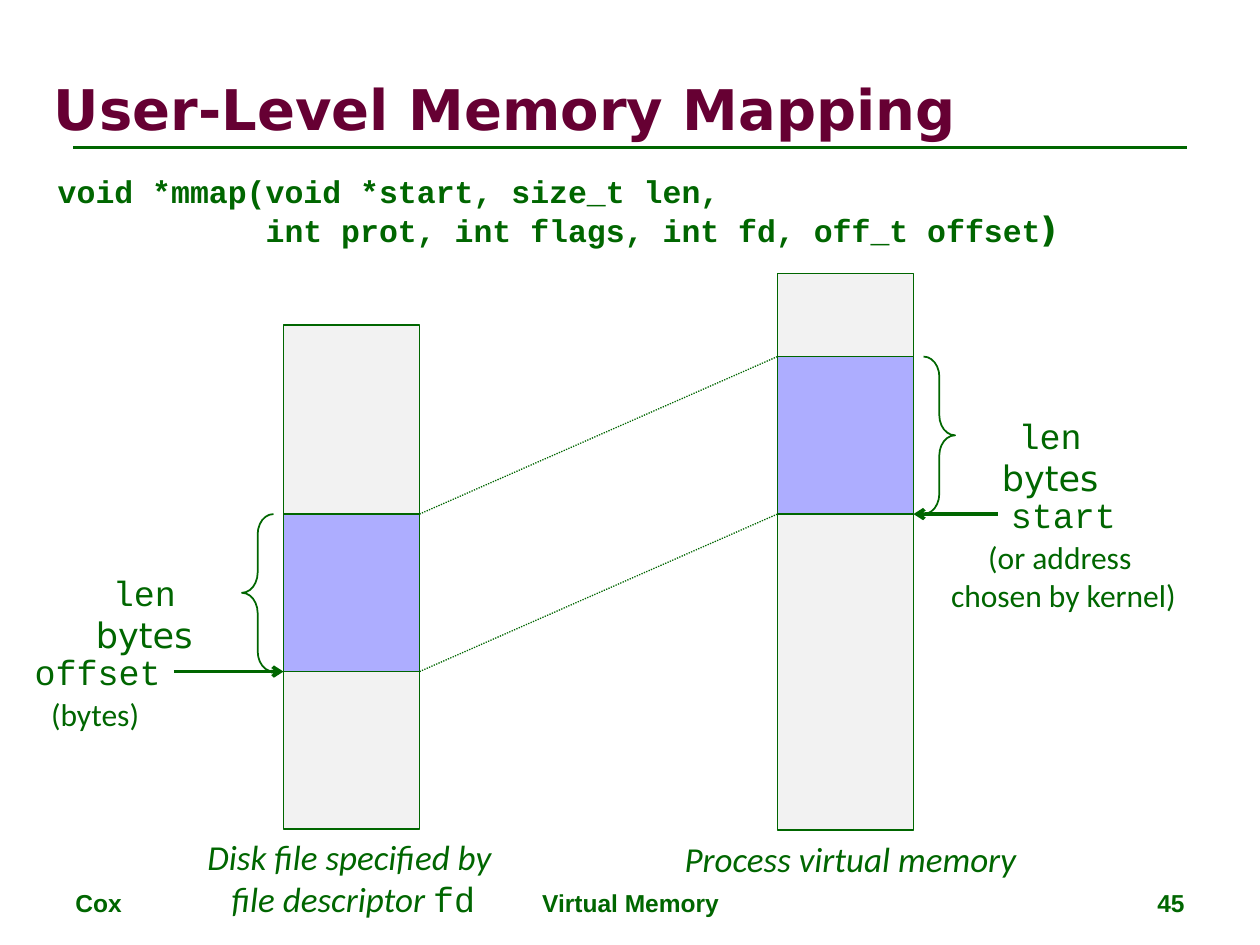
from dataclasses import dataclass

from lxml import etree
from pptx import Presentation
from pptx.dml.color import RGBColor
from pptx.enum.dml import MSO_LINE
from pptx.enum.shapes import MSO_CONNECTOR, MSO_SHAPE
from pptx.enum.text import MSO_ANCHOR, PP_ALIGN
from pptx.oxml.ns import qn
from pptx.util import Inches, Pt

LEFT, CENTER, RIGHT = PP_ALIGN.LEFT, PP_ALIGN.CENTER, PP_ALIGN.RIGHT
TOP, MIDDLE = MSO_ANCHOR.TOP, MSO_ANCHOR.MIDDLE
STRAIGHT = MSO_CONNECTOR.STRAIGHT
RECTANGLE = MSO_SHAPE.RECTANGLE
LEFT_BRACE, RIGHT_BRACE = MSO_SHAPE.LEFT_BRACE, MSO_SHAPE.RIGHT_BRACE
DOTTED = MSO_LINE.ROUND_DOT


@dataclass(frozen=True)
class Theme:
    green: RGBColor = RGBColor(0x00, 0x66, 0x00)
    maroon: RGBColor = RGBColor(0x66, 0x00, 0x33)
    memory: RGBColor = RGBColor(0xF2, 0xF2, 0xF2)
    mapped: RGBColor = RGBColor(0xAD, 0xAD, 0xFF)
    heading: str = "DejaVu Sans"
    code: str = "Courier New"
    body: str = "Calibri"
    footer: str = "Arial"
    title_size: int = 32
    label_size: int = 20
    note_size: int = 18
    footer_size: int = 14


THEME = Theme()

BLOCK_WIDTH = 1.08
MAPPED_HEIGHT = 1.25
BRACE_WIDTH = 0.25
FILE_LEFT, FILE_TOP, FILE_HEIGHT, FILE_MAPPED_TOP = 2.25, 2.58, 4, 4.08
PROCESS_LEFT, PROCESS_TOP, PROCESS_HEIGHT, PROCESS_MAPPED_TOP = 6.17, 2.17, 4.42, 2.83


def add_text(slide, box, lines, font, size, align=CENTER, wrap=False, bold=False,
             italic=False, color=THEME.green, anchor=TOP, line_spacing=None):
    """Add a text box and return its paragraphs, one per line."""
    frame = slide.shapes.add_textbox(*map(Inches, box)).text_frame
    frame.word_wrap = wrap
    frame.vertical_anchor = anchor
    for index, line in enumerate(lines):
        paragraph = frame.add_paragraph() if index else frame.paragraphs[0]
        paragraph.add_run().text = line
        paragraph.alignment = align
        paragraph.line_spacing = line_spacing
        paragraph.font.name = font
        paragraph.font.size = Pt(size)
        paragraph.font.bold = bold
        paragraph.font.italic = italic
        paragraph.font.color.rgb = color
    return frame.paragraphs


def add_run(paragraph, text, font, size=None, italic=None):
    run = paragraph.add_run()
    run.text = text
    run.font.name = font
    run.font.italic = italic
    if size:
        run.font.size = Pt(size)


def add_outline(slide, kind, left, top, width, height, fill=None):
    shape = slide.shapes.add_shape(kind, *map(Inches, (left, top, width, height)))
    shape.shadow.inherit = False
    shape.line.color.rgb = THEME.green
    shape.line.width = Pt(1)
    if fill is None:
        shape.fill.background()
    else:
        shape.fill.solid()
        shape.fill.fore_color.rgb = fill
    return shape


def add_brace(slide, kind, left, top):
    brace = add_outline(slide, kind, left, top, BRACE_WIDTH, MAPPED_HEIGHT)
    brace.adjustments[0] = 0.64


def add_line(slide, start, end, width, dash=None, arrow=False):
    connector = slide.shapes.add_connector(STRAIGHT, *map(Inches, (*start, *end)))
    connector.line.color.rgb = THEME.green
    connector.line.width = Pt(width)
    if dash:
        connector.line.dash_style = dash
    properties = connector._element.spPr
    if arrow:
        etree.SubElement(properties.find(qn("a:ln")), qn("a:tailEnd"), type="arrow")
    etree.SubElement(properties, qn("a:effectLst"))


def add_memory_column(slide, left, top, height, mapped_top):
    add_outline(slide, RECTANGLE, left, top, BLOCK_WIDTH, height, THEME.memory)
    add_outline(slide, RECTANGLE, left, mapped_top, BLOCK_WIDTH, MAPPED_HEIGHT, THEME.mapped)


def add_length_label(slide, left, top):
    paragraph, = add_text(slide, (left, top, 1.51, 0.77), ["len "], THEME.code,
                          THEME.label_size, wrap=True)
    add_run(paragraph, "bytes", THEME.heading)


def add_heading(slide):
    add_line(slide, (0.58, 1.17), (9.42, 1.17), 1.5)
    add_text(slide, (0.33, 0.54, 7.94, 0.63), ["User-Level Memory Mapping"], THEME.heading,
             THEME.title_size, LEFT, wrap=True, bold=True, color=THEME.maroon, anchor=MIDDLE)
    signature = ["void *mmap(void *start, size_t len,",
                 "           int prot, int flags, int fd, off_t offset"]
    paragraphs = add_text(slide, (0.36, 1.34, 9.09, 0.91), signature, THEME.code,
                          THEME.note_size, LEFT, wrap=True, bold=True, line_spacing=0.94)
    add_run(paragraphs[-1], ")", THEME.heading, THEME.label_size)


def add_mapping(slide):
    add_memory_column(slide, FILE_LEFT, FILE_TOP, FILE_HEIGHT, FILE_MAPPED_TOP)
    add_memory_column(slide, PROCESS_LEFT, PROCESS_TOP, PROCESS_HEIGHT, PROCESS_MAPPED_TOP)
    for offset in (0, MAPPED_HEIGHT):
        add_line(slide, (FILE_LEFT + BLOCK_WIDTH, FILE_MAPPED_TOP + offset),
                 (PROCESS_LEFT, PROCESS_MAPPED_TOP + offset), 0.75, dash=DOTTED)


def add_process_labels(slide):
    right = PROCESS_LEFT + BLOCK_WIDTH
    start = PROCESS_MAPPED_TOP + MAPPED_HEIGHT
    add_brace(slide, RIGHT_BRACE, right + 0.08, PROCESS_MAPPED_TOP)
    add_length_label(slide, 7.58, 3.24)
    add_line(slide, (7.92, start), (right, start), 2, arrow=True)
    add_text(slide, (7.92, 3.87, 1.04, 0.44), ["start"], THEME.code, THEME.label_size)
    add_text(slide, (7.42, 4.22, 2.04, 0.71), ["(or address ", "chosen by kernel)"],
             THEME.body, THEME.note_size)
    add_text(slide, (5.29, 6.6, 2.92, 0.44), ["Process virtual memory"], THEME.body,
             THEME.label_size, italic=True)


def add_file_labels(slide):
    offset = FILE_MAPPED_TOP + MAPPED_HEIGHT
    paragraphs = add_text(slide, (1.5, 6.58, 2.61, 0.77),
                          ["Disk file specified by ", "file descriptor "],
                          THEME.body, THEME.label_size, italic=True)
    add_run(paragraphs[-1], "fd", THEME.code, italic=False)
    add_brace(slide, LEFT_BRACE, FILE_LEFT - 0.08 - BRACE_WIDTH, FILE_MAPPED_TOP)
    add_length_label(slide, 0.39, 4.49)
    add_text(slide, (0.17, 5.11, 1.21, 0.44), ["offset"], THEME.code, THEME.label_size)
    add_line(slide, (1.38, offset), (FILE_LEFT, offset), 2, arrow=True)
    add_text(slide, (0.29, 5.47, 0.93, 0.4), ["(bytes)"], THEME.body, THEME.note_size)


def add_footer(slide):
    for text, left, width, align in (("Cox", 0.5, 2.33, LEFT),
                                     ("Virtual Memory", 3.42, 3.17, CENTER),
                                     ("45", 7.17, 2.33, RIGHT)):
        add_text(slide, (left, 7, width, 0.35), [text], THEME.footer, THEME.footer_size,
                 align, wrap=True, bold=True)


def main():
    presentation = Presentation()
    presentation.slide_width = Inches(10)
    presentation.slide_height = Inches(7.5)
    slide = presentation.slides.add_slide(presentation.slide_layouts[6])
    add_heading(slide)
    add_mapping(slide)
    add_process_labels(slide)
    add_file_labels(slide)
    add_footer(slide)
    presentation.save("out.pptx")


if __name__ == "__main__":
    main()
